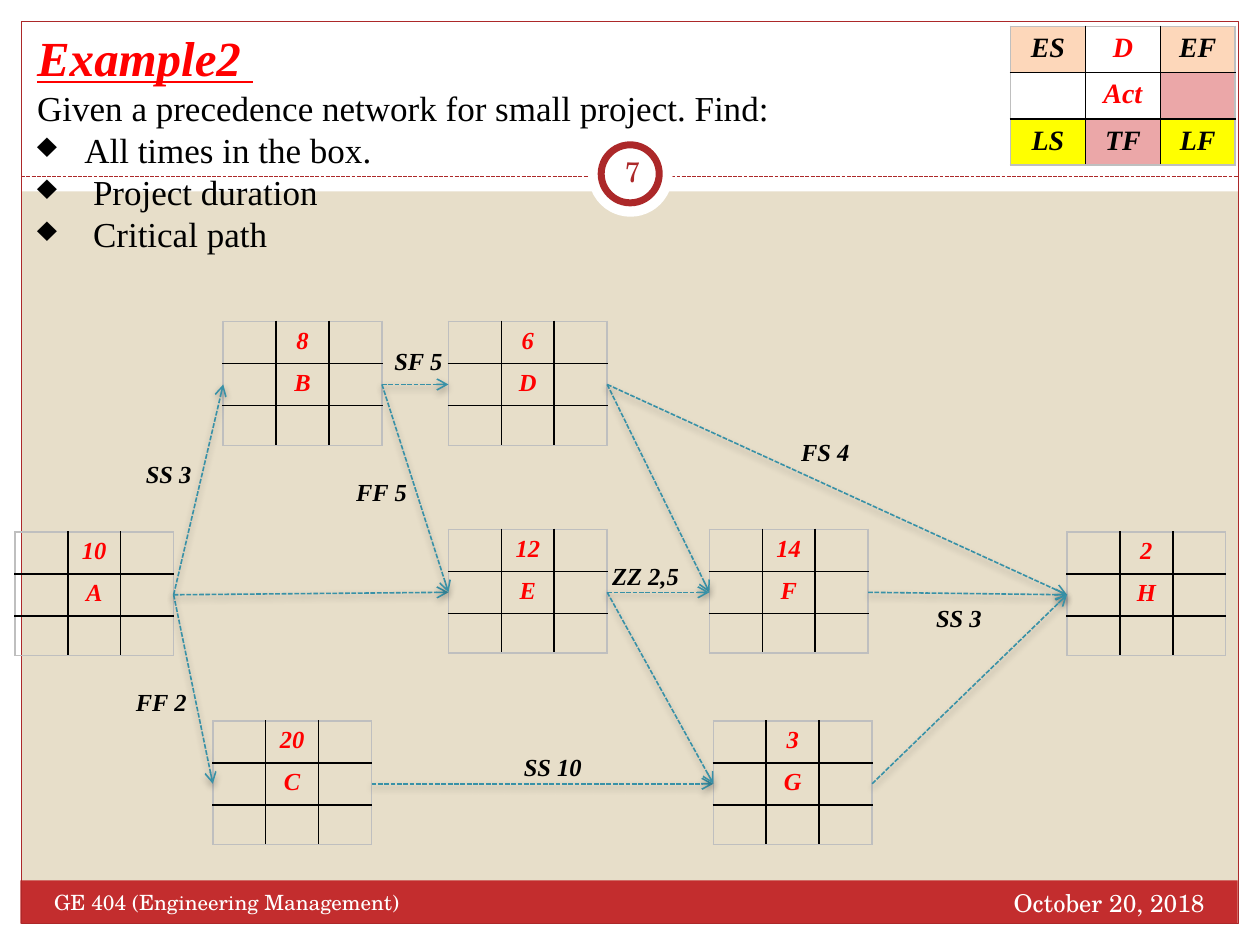
from lxml import etree
from pptx import Presentation
from pptx.dml.color import RGBColor
from pptx.enum.dml import MSO_LINE
from pptx.enum.shapes import MSO_CONNECTOR, MSO_SHAPE
from pptx.enum.text import MSO_ANCHOR, PP_ALIGN
from pptx.oxml import parse_xml
from pptx.oxml.ns import nsdecls, qn
from pptx.util import Cm, Pt

RECT, OVAL = MSO_SHAPE.RECTANGLE, MSO_SHAPE.OVAL
STRAIGHT = MSO_CONNECTOR.STRAIGHT
DASH = MSO_LINE.SQUARE_DOT
LEFT, CENTER, RIGHT = PP_ALIGN.LEFT, PP_ALIGN.CENTER, PP_ALIGN.RIGHT
TOP, MIDDLE = MSO_ANCHOR.TOP, MSO_ANCHOR.MIDDLE
SERIF, SCHOLA = "Times New Roman", "TeX Gyre Schola"
LEFT_SIDE, RIGHT_SIDE = 1, 3

COLORS = {
    "sand": "E7DEC9", "white": "FFFFFF", "black": "000000", "red": "FF0000",
    "footer": "C32D2E", "rule": "AC2829", "arrow": "3891A7", "edge": "BFBFBF",
    "peach": "FDD7BA", "pink": "EBA7A8", "yellow": "FFFF00",
}

NODES = {
    "A": ("10", 0, 4.24), "B": ("8", 4.2, 0), "C": ("20", 3.99, 8.05),
    "D": ("6", 8.74, 0), "E": ("12", 8.74, 4.19), "F": ("14", 14, 4.19),
    "G": ("3", 14.08, 8.05), "H": ("2", 21.21, 4.24),
}
LINKS = ["AB", "AC", "AE", "BD", "BE", "CG", "DF", "DH", "EF", "EG", "FH", "GH"]
LABELS = [
    ("FS 4", 15.6, 2.21, 2), ("SS 10", 10.01, 8.56, 2.26),
    ("FF 2", 2.19, 7.24, 1.75), ("SS 3", 2.39, 2.64, 1.75),
    ("SF 5", 7.4, 0.38, 1.6), ("FF 5", 6.63, 3.02, 1.75),
    ("ZZ 2,5", 11.79, 4.7, 1.9), ("SS 3", 18.32, 5.56, 1.75),
]
LEGEND = [
    [("ES", "black", "peach"), ("D", "red", None), ("EF", "black", "peach")],
    [("", "black", None), ("Act", "red", None), ("", "black", "pink")],
    [("LS", "black", "yellow"), ("TF", "black", "pink"), ("LF", "black", "yellow")],
]


def rgb(name):
    """Return the named colour."""
    return RGBColor.from_string(COLORS[name])


def style(p, size, color, font=SERIF, bold=False, align=LEFT):
    """Format a paragraph; bold text on this slide is also italic."""
    p.alignment = align
    f = p.font
    f.name, f.size, f.bold, f.italic = font, Pt(size), bold, bold
    f.color.rgb = rgb(color)


def add_text(s, box, text, size, color, font=SERIF, bold=False, align=LEFT, anchor=TOP):
    """Add a one-paragraph text box."""
    sp = s.shapes.add_textbox(*map(Cm, box))
    tf = sp.text_frame
    tf.word_wrap, tf.vertical_anchor = True, anchor
    tf.text = text
    style(tf.paragraphs[0], size, color, font, bold, align)
    return tf


def add_panel(s, kind, box, fill=None, line=None, width=0.75):
    """Add a preset shape with optional fill and outline."""
    sp = s.shapes.add_shape(kind, *map(Cm, box))
    sp.shadow.inherit = False
    if fill:
        sp.fill.solid()
        sp.fill.fore_color.rgb = rgb(fill)
    else:
        sp.fill.background()
    if line:
        sp.line.color.rgb = rgb(line)
        sp.line.width = Pt(width)
    else:
        sp.line.fill.background()


def add_dashed(s, ends, color, width):
    """Add a dashed straight connector and its empty effect list."""
    c = s.shapes.add_connector(STRAIGHT, *map(Cm, ends))
    c.line.color.rgb = rgb(color)
    c.line.width = Pt(width)
    c.line.dash_style = DASH
    effects = etree.SubElement(c._element.spPr, qn("a:effectLst"))
    return c, effects


def add_arrow(s, source, target):
    """Join two activity tables with a shadowed arrow."""
    c, effects = add_dashed(s, (0, 0, 1, 1), "arrow", 0.9)
    c.begin_connect(source, RIGHT_SIDE)
    c.end_connect(target, LEFT_SIDE)
    etree.SubElement(c.line._get_or_add_ln(), qn("a:tailEnd"), type="arrow")
    effects.append(parse_xml(
        f'<a:outerShdw {nsdecls("a")} blurRad="50800" dist="25400" dir="5400000">'
        '<a:srgbClr val="000000"><a:alpha val="35000"/></a:srgbClr></a:outerShdw>'))


def border_cell(cell, row, col):
    """Draw grey outer and black inner borders on a cell of a 3 by 3 grid."""
    sides = {"lnL": col == 0, "lnR": col == 2, "lnT": row == 0, "lnB": row == 2}
    for i, (tag, outer) in enumerate(sides.items()):
        color = COLORS["edge" if outer else "black"]
        cell._tc.get_or_add_tcPr().insert(i, parse_xml(
            f'<a:{tag} {nsdecls("a")} w="12700"><a:solidFill>'
            f'<a:srgbClr val="{color}"/></a:solidFill></a:{tag}>'))


def add_grid(s, box, rows, row_height, size):
    """Add a 3 by 3 table of (text, colour, fill) cells."""
    frame = s.shapes.add_table(3, 3, *map(Cm, box))
    table = frame.table
    table.first_row = table.horz_banding = False
    for i, row in enumerate(rows):
        table.rows[i].height = Cm(row_height)
        for j, (text, color, fill) in enumerate(row):
            cell = table.cell(i, j)
            cell.text = text
            style(cell.text_frame.paragraphs[0], size, color, bold=True, align=CENTER)
            if not text:
                cell.margin_top = cell.margin_bottom = 0
            if fill:
                cell.fill.solid()
                cell.fill.fore_color.rgb = rgb(fill)
            else:
                cell.fill.background()
            border_cell(cell, i, j)
    frame.height = Cm(box[3])
    return frame


def backdrop(s, box):
    """Draw the margins, frame, footer and page badge."""
    x, y, w, h = box
    edge = 0.43
    for strip in ((x, y + h - edge, w, edge), (x, y, w, 3.86),
                  (x, y, edge, h), (x + w - edge, y, edge, h)):
        add_panel(s, RECT, strip, "white")
    add_panel(s, RECT, (x + 0.41, y + 17.75, w - 0.86, 0.87), "footer")
    add_panel(s, RECT, (x + edge, y + edge, w - 2 * edge, h - 2 * edge), line="rule")
    add_dashed(s, (x + edge, y + 3.56, x + w - edge, y + 3.56), "rule", 0.75)
    add_panel(s, OVAL, (x + 11.86, y + 2.67, 1.7, 1.7), "white")
    add_panel(s, OVAL, (x + 12.12, y + 2.92, 1.17, 1.17), "white", "rule", 4)
    add_text(s, (x + 16.08, y + 17.78, 8.46, 1.02), "October 20, 2018",
             14, "white", SCHOLA, align=RIGHT)
    add_text(s, (x + 0.84, y + 17.81, 9.96, 1.02), "GE 404 (Engineering Management)",
             12, "white", SCHOLA)
    tf = add_text(s, (x + 12.12, y + 2.84, 1.27, 1.22), "7", 16, "rule",
                  SCHOLA, align=CENTER, anchor=MIDDLE)
    tf.margin_left = tf.margin_right = Cm(0.13)


def network(s, box):
    """Draw the activities, their links and the link labels."""
    x, y = box[:2]
    blank = ("", "red", None)
    tables = {}
    for name, (days, dx, dy) in NODES.items():
        rows = [[blank, (text, "red", "sand"), blank] for text in (days, name, "")]
        tables[name] = add_grid(s, (x + dx, y + dy, 3.2, 2.54), rows, 0.8, 14)
    for source, target in LINKS:
        add_arrow(s, tables[source], tables[target])
    for text, dx, dy, w in LABELS:
        add_text(s, (x + dx, y + dy, w, 0.86), text, 14, "black", bold=True)


def heading(s, box):
    """Write the title, the task and its bullets."""
    tf = add_text(s, box, "Example2 ", 28, "red", bold=True)
    tf.paragraphs[0].font.underline = True
    lines = ["Given a precedence network for small project. Find:",
             "All times in the box.", " Project duration", " Critical path"]
    for i, text in enumerate(lines):
        p = tf.add_paragraph()
        p.text = text
        style(p, 20, "black")
        if i:
            pPr = p._p.get_or_add_pPr()
            pPr.set("marL", str(Cm(0.95)))
            pPr.set("indent", str(-Cm(0.95)))
            pPr.insert(0, parse_xml(f'<a:buChar {nsdecls("a")} char="♦"/>'))


def main():
    """Build the slide and save it."""
    prs = Presentation()
    prs.slide_width, prs.slide_height = Cm(25.4), Cm(19.05)
    s = prs.slides.add_slide(prs.slide_layouts[6])
    s.background.fill.solid()
    s.background.fill.fore_color.rgb = rgb("sand")
    backdrop(s, (0, 0, 25.4, 19.05))
    network(s, (0.3, 6.48, 24.41, 10.59))
    add_grid(s, (20.37, 0.53, 4.53, 2.79), LEGEND, 0.93, 16)
    heading(s, (0.5, 0.43, 15.8, 4.88))
    prs.save("out.pptx")


if __name__ == "__main__":
    main()
